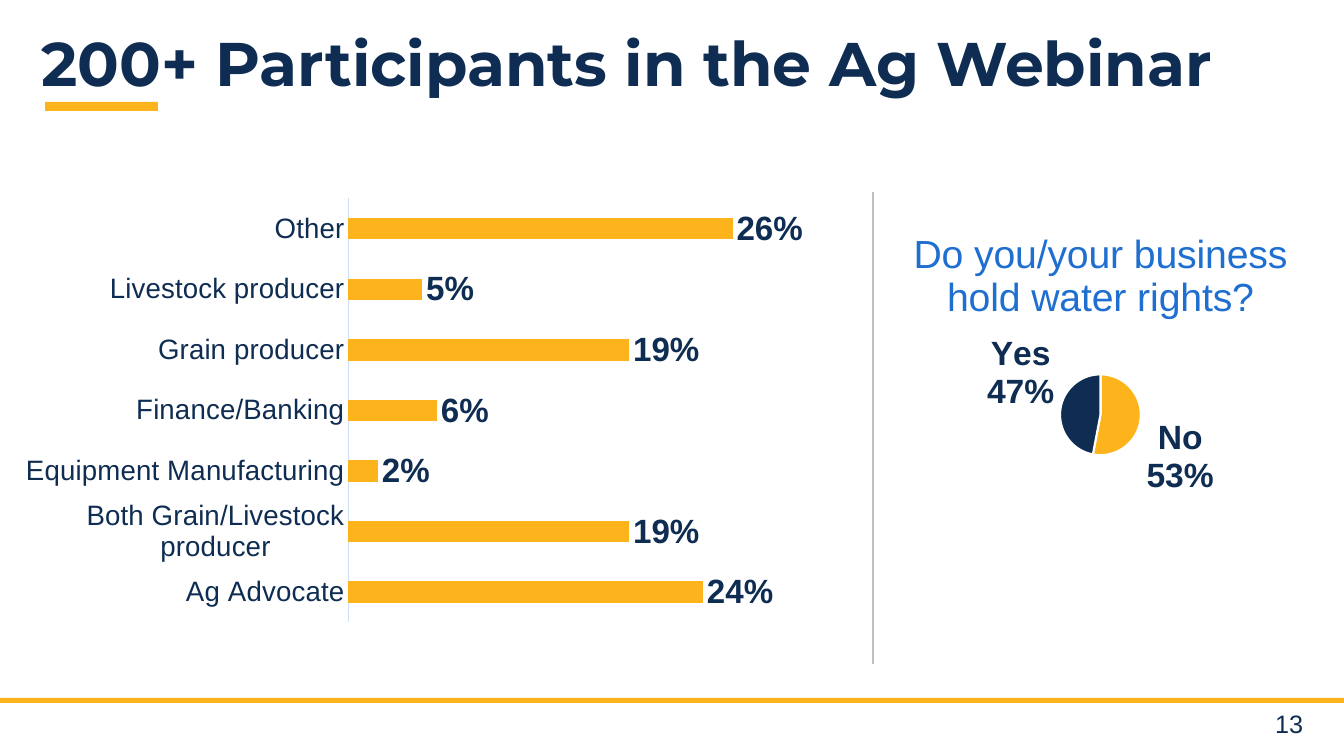
from lxml.etree import SubElement
from pptx import Presentation
from pptx.chart.data import CategoryChartData
from pptx.dml.color import RGBColor
from pptx.enum.chart import XL_CHART_TYPE, XL_LABEL_POSITION, XL_TICK_MARK
from pptx.enum.shapes import MSO_CONNECTOR, MSO_SHAPE
from pptx.enum.text import MSO_ANCHOR, MSO_AUTO_SIZE, PP_ALIGN
from pptx.oxml import parse_xml
from pptx.oxml.ns import nsdecls, qn
from pptx.util import Emu, Pt

NAVY = RGBColor(0x0F, 0x2D, 0x52)
GOLD = RGBColor(0xFC, 0xB3, 0x1C)
BLUE = RGBColor(0x1F, 0x6F, 0xD0)
PALE_BLUE = RGBColor(0xCB, 0xDE, 0xF5)
GRAY = RGBColor(0xBF, 0xBF, 0xBF)
WHITE = RGBColor(0xFF, 0xFF, 0xFF)
EMU_PER_PX = 914400 / 100.8


def px(*lengths):
    return [Emu(round(n * EMU_PER_PX)) for n in lengths]


def manual_layout(**values):
    """Build a chart layout element; values are fractions of the chart size."""
    layout = parse_xml(f"<c:layout {nsdecls('c')}><c:manualLayout/></c:layout>")
    for tag, value in values.items():
        SubElement(layout[0], qn(f"c:{tag}")).set("val", str(value))
    return layout


prs = Presentation()
prs.slide_width, prs.slide_height = px(1344, 756)
slide = prs.slides.add_slide(prs.slide_layouts[5])
shapes = slide.shapes

# Title and page furniture
title = shapes.title
title.left, title.top, title.width, title.height = px(31, 24, 1282, 86)
title.text_frame.auto_size = MSO_AUTO_SIZE.NONE
title.text_frame.vertical_anchor = MSO_ANCHOR.MIDDLE
heading = title.text_frame.paragraphs[0]
heading.alignment = PP_ALIGN.LEFT
heading.line_spacing = 0.9
heading_run = heading.add_run()
heading_run.text = "200+ Participants in the Ag Webinar"

page_number = shapes.add_textbox(*px(1218, 706, 95, 35)).text_frame
page_number.word_wrap = True
page_number.vertical_anchor = MSO_ANCHOR.MIDDLE
page_number.paragraphs[0].alignment = PP_ALIGN.RIGHT
number_run = page_number.paragraphs[0].add_run()
number_run.text = "13"

for run, face, size, bold in ((heading_run, "Montserrat", 44, True),
                              (number_run, "Arial", 18, False)):
    run.font.name = face
    run.font.size = Pt(size)
    run.font.bold = bold
    run.font.color.rgb = NAVY

for bounds in ((-18, 698, 1376, 5), (45, 102, 113, 9)):
    rule = shapes.add_shape(MSO_SHAPE.RECTANGLE, *px(*bounds))
    rule.shadow.inherit = False
    rule.fill.solid()
    rule.fill.fore_color.rgb = GOLD
    rule.line.fill.background()

# Chart data
participants = CategoryChartData(number_format="0%")
for role, share in (("Ag Advocate", 0.24),
                    ("Both Grain/Livestock producer", 0.19),
                    ("Equipment Manufacturing", 0.02),
                    ("Finance/Banking", 0.06),
                    ("Grain producer", 0.19),
                    ("Livestock producer", 0.05),
                    ("Other", 0.26)):
    participants.add_category(role)
    participants.categories
    participants_share = share
    if len(participants.categories) == 1:
        role_shares = []
    role_shares.append(participants_share)
participants.add_series("Series 1", role_shares)

water_rights = CategoryChartData()
water_rights.categories = ["No", "Yes"]
water_rights.add_series("Series 1", [53, 47])

bar_chart = shapes.add_chart(
    XL_CHART_TYPE.BAR_CLUSTERED, *px(0, 180, 803, 461), participants).chart
pie_chart = shapes.add_chart(
    XL_CHART_TYPE.PIE, *px(848, 211, 505, 302), water_rights).chart

for chart, plot_area in ((bar_chart, (0.44, 0.04, 0.56, 0.92)),
                         (pie_chart, (0.42, 0.54, 0.16, 0.27))):
    chart.has_legend = False
    chart.font.name = "Arial"
    chart.font.size = Pt(10)
    chart.font.color.rgb = NAVY
    area = chart.plots[0]._element.getparent()
    for automatic in area.findall(qn("c:layout")):
        area.remove(automatic)
    x, y, w, h = plot_area
    area.insert(0, manual_layout(layoutTarget="inner", xMode="edge",
                                 yMode="edge", x=x, y=y, w=w, h=h))
    chart.plots[0].has_data_labels = True
    labels = chart.plots[0].data_labels
    labels.position = XL_LABEL_POSITION.OUTSIDE_END
    labels.font.name = "Arial"
    labels.font.size = Pt(24)
    labels.font.bold = True
    labels.font.color.rgb = NAVY

# Participants by role
bar_chart.has_title = False
bars = bar_chart.plots[0]
bars.gap_width = 182
bars.vary_by_categories = False
bars.series[0].format.fill.solid()
bars.series[0].format.fill.fore_color.rgb = GOLD
bars.data_labels.show_value = True
bars.data_labels.number_format = "0%"
bars.data_labels.number_format_is_linked = False

role_axis = bar_chart.category_axis
role_axis.major_tick_mark = role_axis.minor_tick_mark = XL_TICK_MARK.NONE
role_axis.tick_labels.font.name = "Arial"
role_axis.tick_labels.font.size = Pt(20)
role_axis.tick_labels.font.color.rgb = NAVY
role_axis.format.line.color.rgb = PALE_BLUE
role_axis.format.line.width = Pt(0.75)

share_axis = bar_chart.value_axis
share_axis.minimum_scale = 0
share_axis.maximum_scale = 0.3
share_axis.has_major_gridlines = False
share_axis.visible = False

# Water rights
question = pie_chart.chart_title.text_frame.paragraphs[0].add_run()
question.text = "Do you/your business hold water rights?"
question.font.name = "Arial"
question.font.size = Pt(28)
question.font.bold = False
question.font.color.rgb = BLUE

pie = pie_chart.plots[0]
pie.vary_by_categories = True
pie.data_labels.show_value = False
pie.data_labels.show_percentage = True
pie.data_labels.show_category_name = True
for index, color in enumerate((GOLD, NAVY)):
    wedge = pie.series[0].points[index].format
    wedge.fill.solid()
    wedge.fill.fore_color.rgb = color
    wedge.line.color.rgb = WHITE
    wedge.line.width = Pt(1.5)

divider = shapes.add_connector(MSO_CONNECTOR.STRAIGHT, *px(873, 192, 873, 664))
divider.line.color.rgb = GRAY
divider.line.width = Pt(1.5)
SubElement(divider._element.spPr, qn("a:effectLst"))

prs.save("out.pptx")
